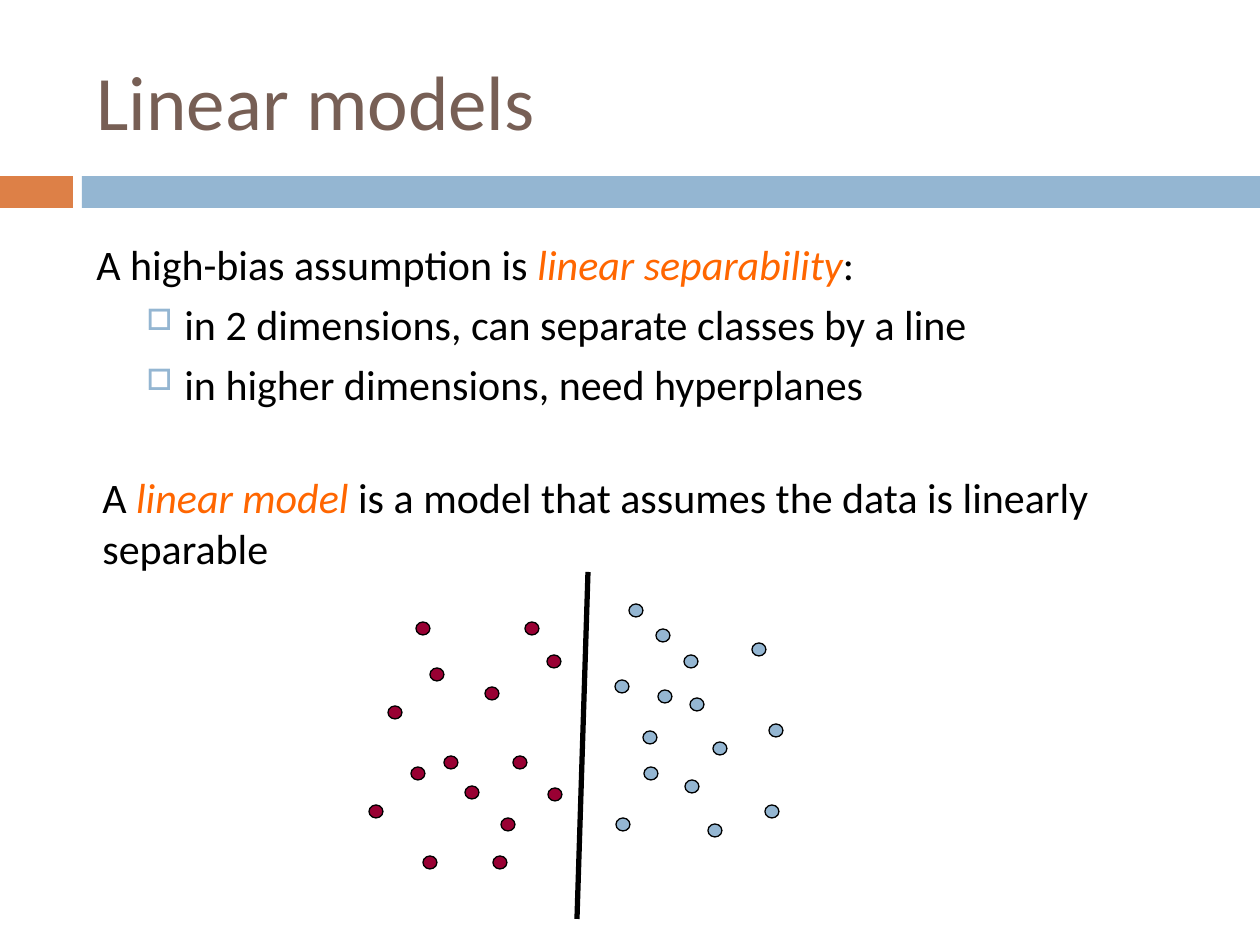
import dataclasses

import lxml.etree
import pptx
import pptx.dml.color
import pptx.enum.shapes
import pptx.enum.text
import pptx.oxml.ns
import pptx.util

SHAPE = pptx.enum.shapes.MSO_SHAPE
ANCHOR = pptx.enum.text.MSO_ANCHOR
ALIGN = pptx.enum.text.PP_ALIGN
qn = pptx.oxml.ns.qn


@dataclasses.dataclass(frozen=True)
class Theme:
    font: str = "Calibri"
    title: int = 44
    body: int = 24
    brown: str = "775F55"
    rust: str = "DD8047"
    blue: str = "94B6D2"
    red: str = "990033"
    key: str = "FF6600"
    ink: str = "000000"


def px(n):
    return pptx.util.Emu(round(n * 914400 / 126))


def rgb(code):
    return pptx.dml.color.RGBColor.from_string(code)


class Deck:
    def __init__(self, theme, wide, high):
        self.theme = theme
        self.file = pptx.Presentation()
        self.file.slide_width = px(wide)
        self.file.slide_height = px(high)
        self.slide = self.file.slides.add_slide(self.file.slide_layouts[5])
        self.shapes = self.slide.shapes

    def style(self, para, size, color):
        para.alignment = ALIGN.LEFT
        para.font.name = self.theme.font
        para.font.size = pptx.util.Pt(size)
        para.font.color.rgb = rgb(color)

    def title(self, text, x, y, w, h):
        box = self.shapes.title
        box.left, box.top, box.width, box.height = map(px, (x, y, w, h))
        box.text_frame.text = text
        box.text_frame.vertical_anchor = ANCHOR.MIDDLE
        self.style(box.text_frame.paragraphs[0], self.theme.title, self.theme.brown)

    def shape(self, kind, color, x, y, w, h, edge=None):
        item = self.shapes.add_shape(kind, px(x), px(y), px(w), px(h))
        item.shadow.inherit = False
        item.fill.solid()
        item.fill.fore_color.rgb = rgb(color)
        if edge:
            item.line.color.rgb = rgb(edge)
            item.line.width = pptx.util.Pt(0.75)
        else:
            item.line.fill.background()

    def bar(self, color, x, w):
        self.shape(SHAPE.RECTANGLE, color, x, 176, w, 32)

    def dots(self, color, spots):
        for x, y in spots:
            self.shape(SHAPE.OVAL, color, x, y, 14, 13, self.theme.ink)

    def line(self, x1, y1, x2, y2):
        item = self.shapes.add_connector(
            pptx.enum.shapes.MSO_CONNECTOR.STRAIGHT, px(x1), px(y1), px(x2), px(y2))
        item.line.color.rgb = rgb(self.theme.ink)
        item.line.width = pptx.util.Pt(3)
        lxml.etree.SubElement(item._element.spPr, qn("a:effectLst"))

    def box(self, x, y, w, h):
        frame = self.shapes.add_textbox(px(x), px(y), px(w), px(h)).text_frame
        frame.word_wrap = True
        return frame

    def para(self, frame, parts, space, left=0, mark=None):
        para = frame.paragraphs[0]
        if para.runs:
            para = frame.add_paragraph()
        self.style(para, self.theme.body, self.theme.ink)
        para.space_before = pptx.util.Pt(space)
        for text, key in parts:
            run = para.add_run()
            run.text = text
            if key:
                run.font.italic = True
                run.font.color.rgb = rgb(self.theme.key)
        props = para._p.get_or_add_pPr()
        props.set("marL", str(px(left)))
        props.set("indent", str(px(-38 if mark else 0)))
        if mark:
            tint = lxml.etree.SubElement(props, qn("a:buClr"))
            lxml.etree.SubElement(tint, qn("a:srgbClr"), val=self.theme.blue)
            lxml.etree.SubElement(props, qn("a:buSzPct"), val="70000")
            lxml.etree.SubElement(props, qn("a:buChar"), char=mark)
            props.append(props.find(qn("a:defRPr")))


REDS = [
    (416, 622), (430, 668), (444, 756), (525, 622), (388, 706),
    (485, 687), (547, 655), (513, 756), (411, 767), (423, 856),
    (369, 805), (465, 786), (493, 856), (548, 788), (501, 818),
]
BLUES = [
    (615, 680), (629, 604), (643, 731), (656, 629), (752, 643),
    (684, 655), (644, 767), (658, 690), (616, 818), (690, 698),
    (769, 724), (713, 742), (685, 780), (765, 805), (708, 824),
]


def main():
    theme = Theme()
    deck = Deck(theme, 1260, 945)
    deck.bar(theme.rust, 0, 73)
    deck.bar(theme.blue, 82, 1178)
    deck.title("Linear models", 84, 32, 1124, 136)

    body = deck.box(84, 232, 1071, 220)
    deck.para(body, [("A high-bias assumption is ", False),
                     ("linear separability", True), (":", False)], 7)
    for text in ("in 2 dimensions, can separate classes by a line",
                 "in higher dimensions, need hyperplanes"):
        deck.para(body, [(text, False)], 5.5, 88, "□")
    deck.para(body, [("A ", False), ("linear model ", True),
                     ("is a model that assumes the data is linearly separable", False)],
              36, 6)

    deck.dots(theme.red, REDS)
    deck.dots(theme.blue, BLUES)
    deck.line(588, 572, 577, 919)
    deck.file.save("out.pptx")


if __name__ == "__main__":
    main()
